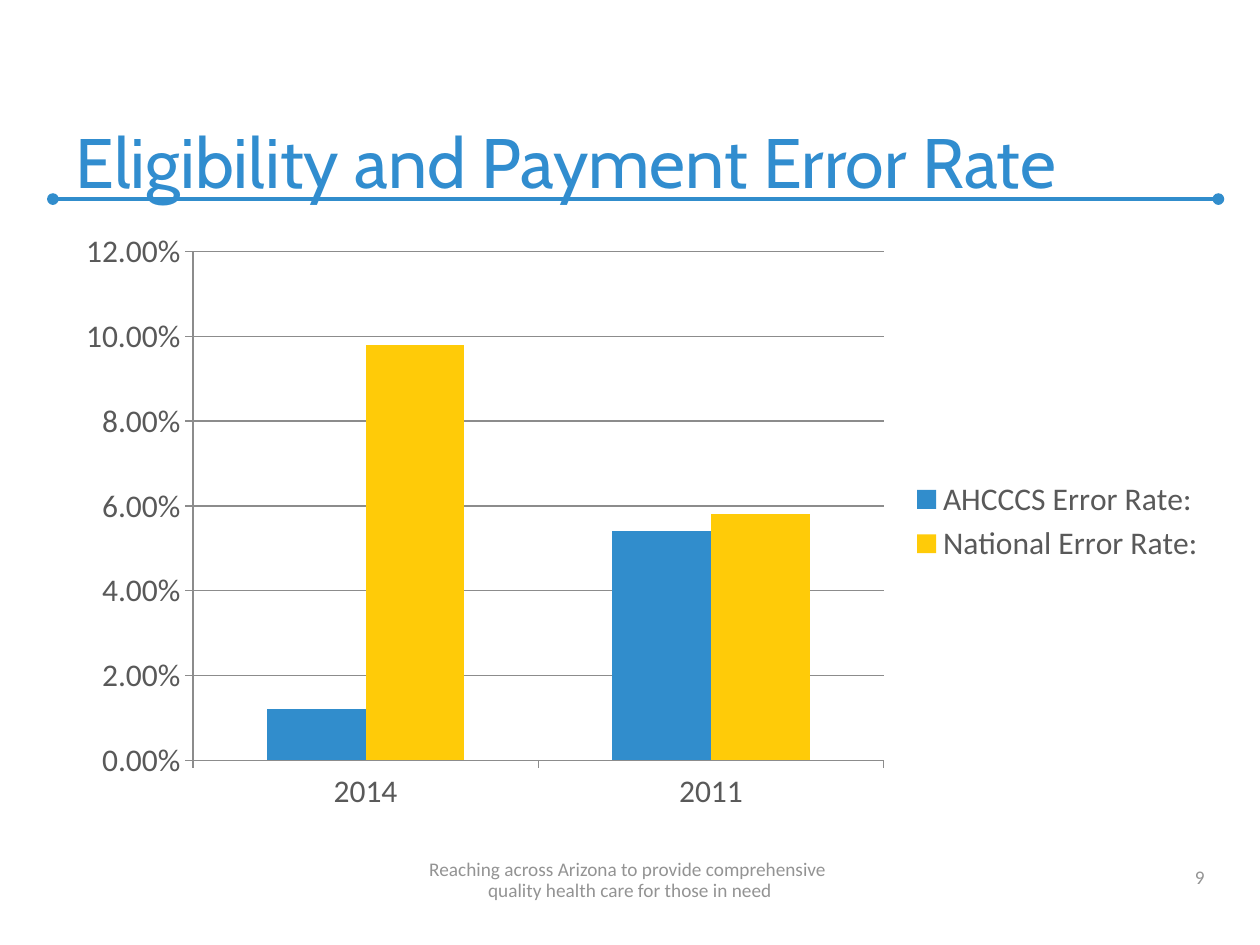
from dataclasses import dataclass

from lxml import etree
from pptx import Presentation
from pptx.chart.data import CategoryChartData
from pptx.dml.color import RGBColor
from pptx.enum.chart import XL_CHART_TYPE, XL_LEGEND_POSITION, XL_TICK_MARK
from pptx.enum.shapes import MSO_CONNECTOR
from pptx.enum.text import MSO_ANCHOR, PP_ALIGN
from pptx.oxml.ns import qn
from pptx.slide import Slide
from pptx.util import Inches, Pt

COLUMNS = XL_CHART_TYPE.COLUMN_CLUSTERED
LEGEND_RIGHT = XL_LEGEND_POSITION.RIGHT
TICK_OUT = XL_TICK_MARK.OUTSIDE
TICK_NONE = XL_TICK_MARK.NONE
STRAIGHT = MSO_CONNECTOR.STRAIGHT
BOTTOM = MSO_ANCHOR.BOTTOM
LEFT, CENTER, RIGHT = PP_ALIGN.LEFT, PP_ALIGN.CENTER, PP_ALIGN.RIGHT

TITLE_BLUE = RGBColor(0x31, 0x8D, 0xCF)
BLUE = RGBColor(0x31, 0x8D, 0xCC)
YELLOW = RGBColor(0xFF, 0xCB, 0x08)
CHART_TEXT = RGBColor(0x59, 0x59, 0x59)
FOOTER_GRAY = RGBColor(0x93, 0x93, 0x93)
AXIS_GRAY = RGBColor(0x8C, 0x8C, 0x8C)


@dataclass
class Label:
    text: str
    left: float
    top: float
    width: float
    height: float
    size: int
    font: str
    color: RGBColor
    align: PP_ALIGN
    line_spacing: int | None = None


@dataclass
class Series:
    name: str
    values: tuple[float, ...]
    color: RGBColor


LABELS = [
    Label("Eligibility and Payment Error Rate", 0.5, 0.33, 9.08, 1.33,
          40, "Cabin", TITLE_BLUE, LEFT),
    Label("9", 7.33, 6.78, 2.33, 0.32, 11, "Calibri", FOOTER_GRAY, RIGHT),
    Label("Reaching across Arizona to provide comprehensive \v"
          "quality health care for those in need",
          0, 6.78, 10, 0.42, 11, "Calibri", FOOTER_GRAY, CENTER, 12),
]
YEARS = ["2014", "2011"]
ERROR_RATES = [
    Series("AHCCCS Error Rate:", (0.012, 0.054), BLUE),
    Series("National Error Rate:", (0.098, 0.058), YELLOW),
]


def add_title_rule(page: Slide) -> None:
    """Draw the line under the title, with a dot at each end."""
    rule = page.shapes.add_connector(
        STRAIGHT, Inches(0.42), Inches(1.58), Inches(9.67), Inches(1.58))
    rule.line.color.rgb = BLUE
    rule.line.width = Pt(2.25)
    outline = rule.line._get_or_add_ln()
    for end in ("a:headEnd", "a:tailEnd"):
        etree.SubElement(outline, qn(end), type="oval")
    etree.SubElement(rule._element.spPr, qn("a:effectLst"))


def add_label(page: Slide, label: Label) -> None:
    box = page.shapes.add_textbox(Inches(label.left), Inches(label.top),
                                  Inches(label.width), Inches(label.height))
    frame = box.text_frame
    frame.word_wrap = True
    frame.vertical_anchor = BOTTOM
    frame.text = label.text
    para = frame.paragraphs[0]
    para.alignment = label.align
    if label.line_spacing:
        para.line_spacing = Pt(label.line_spacing)
    for span in para.runs:
        span.font.size = Pt(label.size)
        span.font.name = label.font
        span.font.color.rgb = label.color


def add_error_chart(page: Slide) -> None:
    data = CategoryChartData(number_format="0.00%")
    data.categories = YEARS
    for series in ERROR_RATES:
        data.add_series(series.name, series.values)
    chart = page.shapes.add_chart(COLUMNS, Inches(0.5), Inches(1.75),
                                  Inches(9.17), Inches(4.78), data).chart
    chart.has_title = False
    chart.font.size = Pt(18)
    chart.font.name = "Calibri"
    chart.font.color.rgb = CHART_TEXT
    chart.has_legend = True
    chart.legend.position = LEGEND_RIGHT
    chart.legend.include_in_layout = False

    plot = chart.plots[0]
    plot.gap_width = 150
    plot.overlap = 0
    plot.vary_by_categories = False
    for drawn, series in zip(plot.series, ERROR_RATES):
        drawn.invert_if_negative = False
        drawn.format.fill.solid()
        drawn.format.fill.fore_color.rgb = series.color

    for axis in (chart.category_axis, chart.value_axis):
        axis.major_tick_mark = TICK_OUT
        axis.minor_tick_mark = TICK_NONE
        axis.format.line.color.rgb = AXIS_GRAY
    scale = chart.value_axis
    scale.minimum_scale, scale.maximum_scale, scale.major_unit = 0, 0.12, 0.02
    scale.has_major_gridlines = True
    scale.major_gridlines.format.line.color.rgb = AXIS_GRAY
    scale.tick_labels.number_format = "0.00%"
    scale.tick_labels.number_format_is_linked = False


def main() -> None:
    deck = Presentation()
    deck.slide_width, deck.slide_height = Inches(10), Inches(7.5)
    page = deck.slides.add_slide(deck.slide_layouts[6])
    add_title_rule(page)
    add_error_chart(page)
    for label in LABELS:
        add_label(page, label)
    deck.save("out.pptx")


if __name__ == "__main__":
    main()
